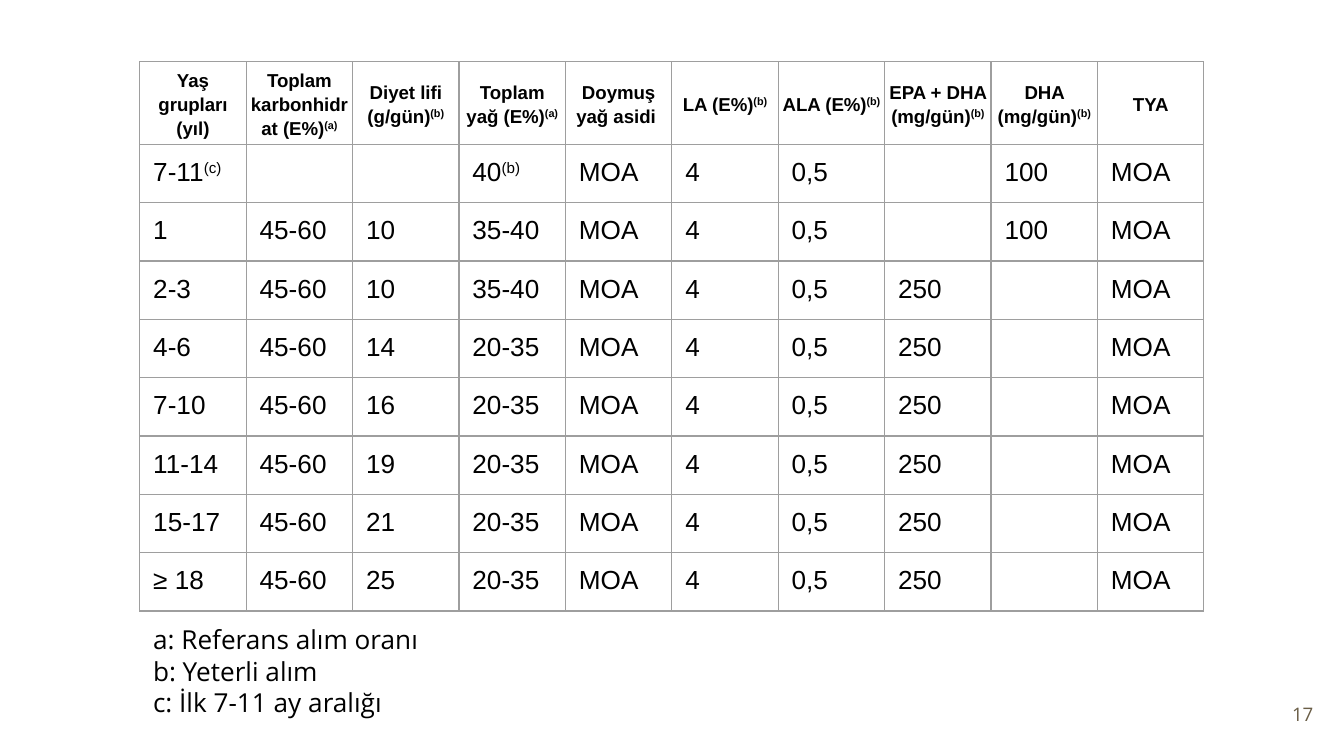
from lxml import etree
from pptx import Presentation
from pptx.dml.color import RGBColor
from pptx.enum.text import MSO_ANCHOR, PP_ALIGN
from pptx.oxml.ns import qn
from pptx.util import Inches, Pt

MIDDLE, TOP = MSO_ANCHOR.MIDDLE, MSO_ANCHOR.TOP
LEFT, CENTER, RIGHT = PP_ALIGN.LEFT, PP_ALIGN.CENTER, PP_ALIGN.RIGHT

THEME = {
    "text": "000000", "number": "695D46", "border": "9E9E9E",
    "table_font": "Arial", "note_font": "Open Sans",
    "small": 10, "body": 14, "border_width": 0.75,
}
NO_STYLE = "{2D5ABB26-0587-4C30-8999-92F81FD0307C}"

# Grid; the frame is smaller than the table, whose rows grow with their text
TABLE_LEFT, TABLE_TOP, TABLE_WIDTH = 1.04, 0.46, 7.92
ROW_HEIGHT, FRAME_SIZE = 0.42, 3.28
INSET = 0.1

# Table text; "^" starts a superscript
HEADERS = [
    "Yaş grupları (yıl)", "Toplam karbonhidrat (E%)^(a)",
    "Diyet lifi (g/gün)^(b)", "Toplam yağ (E%)^(a)", "Doymuş yağ asidi ",
    "LA (E%)^(b)", "ALA (E%)^(b)", "EPA + DHA (mg/gün)^(b)",
    "DHA (mg/gün)^(b)", "TYA",
]
# Age, carbohydrate, fibre, total fat, EPA + DHA, DHA
AGES = [
    ("7-11^(c)", "", "", "40^(b)", "", "100"),
    ("1", "45-60", "10", "35-40", "", "100"),
    ("2-3", "45-60", "10", "35-40", "250", ""),
    ("4-6", "45-60", "14", "20-35", "250", ""),
    ("7-10", "45-60", "16", "20-35", "250", ""),
    ("11-14", "45-60", "19", "20-35", "250", ""),
    ("15-17", "45-60", "21", "20-35", "250", ""),
    ("≥ 18", "45-60", "25", "20-35", "250", ""),
]
rows = [HEADERS] + [
    [age, carb, fibre, fat, "MOA", "4", "0,5", epa, dha, "MOA"]
    for age, carb, fibre, fat, epa, dha in AGES
]
NOTES = ["a: Referans alım oranı", "b: Yeterli alım", "c: İlk 7-11 ay aralığı"]


def write(p, text, font, size, color, align=LEFT, bold=False):
    p.alignment = align
    for i, part in enumerate(text.split("^") if text else []):
        r = p.add_run()
        r.text = part
        r.font.name, r.font.size, r.font.bold = font, Pt(size), bold
        r.font.color.rgb = RGBColor.from_string(color)
        if i:
            r.font._element.set("baseline", "30000")
    if not text:
        p._p.get_or_add_endParaRPr().set("sz", str(size * 100))


def add_text(slide, box, lines, size, color, align, anchor):
    tf = slide.shapes.add_textbox(*map(Inches, box)).text_frame
    tf.word_wrap = True
    tf.vertical_anchor = anchor
    tf.margin_left = tf.margin_right = Inches(INSET)
    tf.margin_top = tf.margin_bottom = Inches(INSET)
    for i, line in enumerate(lines):
        p = tf.add_paragraph() if i else tf.paragraphs[0]
        write(p, line, THEME["note_font"], size, color, align)


# Widescreen slide
prs = Presentation()
prs.slide_width = Inches(10)
prs.slide_height = prs.slide_width * 9 // 16
slide = prs.slides.add_slide(prs.slide_layouts[6])

# Slide number
add_text(slide, (9.27, 5.1, 0.6, 0.43), ["17"], THEME["small"],
         THEME["number"], RIGHT, MIDDLE)

# Intake table
frame = slide.shapes.add_table(
    len(rows), len(HEADERS), Inches(TABLE_LEFT), Inches(TABLE_TOP),
    Inches(TABLE_WIDTH), Inches(ROW_HEIGHT * len(rows)))
table = frame.table
table.horz_banding = False
table._tbl.tblPr.find(qn("a:tableStyleId")).text = NO_STYLE
for column in table.columns:
    column.width = Inches(TABLE_WIDTH / len(HEADERS))

for i, row in enumerate(rows):
    header = i == 0
    table.rows[i].height = Inches(ROW_HEIGHT)
    for j, text in enumerate(row):
        cell = table.cell(i, j)
        cell.vertical_anchor = MIDDLE if header else TOP
        cell.margin_left = cell.margin_right = Inches(0.03 if header else INSET)
        cell.margin_top = cell.margin_bottom = Inches(0.02 if header else INSET)
        p = cell.text_frame.paragraphs[0]
        if header:
            p.line_spacing = 1.15
        write(p, text, THEME["table_font"],
              THEME["small"] if header else THEME["body"], THEME["text"],
              CENTER if header else LEFT, header)

        # Borders come before the fill in the cell properties
        tcPr = cell._tc.get_or_add_tcPr()
        for side in ("lnL", "lnR", "lnT", "lnB"):
            ln = etree.SubElement(tcPr, qn(f"a:{side}"),
                                  w=str(Pt(THEME["border_width"])))
            fill = etree.SubElement(ln, qn("a:solidFill"))
            etree.SubElement(fill, qn("a:srgbClr"), val=THEME["border"])
        cell.fill.background()
frame.width = frame.height = Inches(FRAME_SIZE)

# Footnotes
add_text(slide, (TABLE_LEFT, 4.54, TABLE_WIDTH, 0.83), NOTES, THEME["body"],
         THEME["text"], LEFT, TOP)

prs.save("out.pptx")
